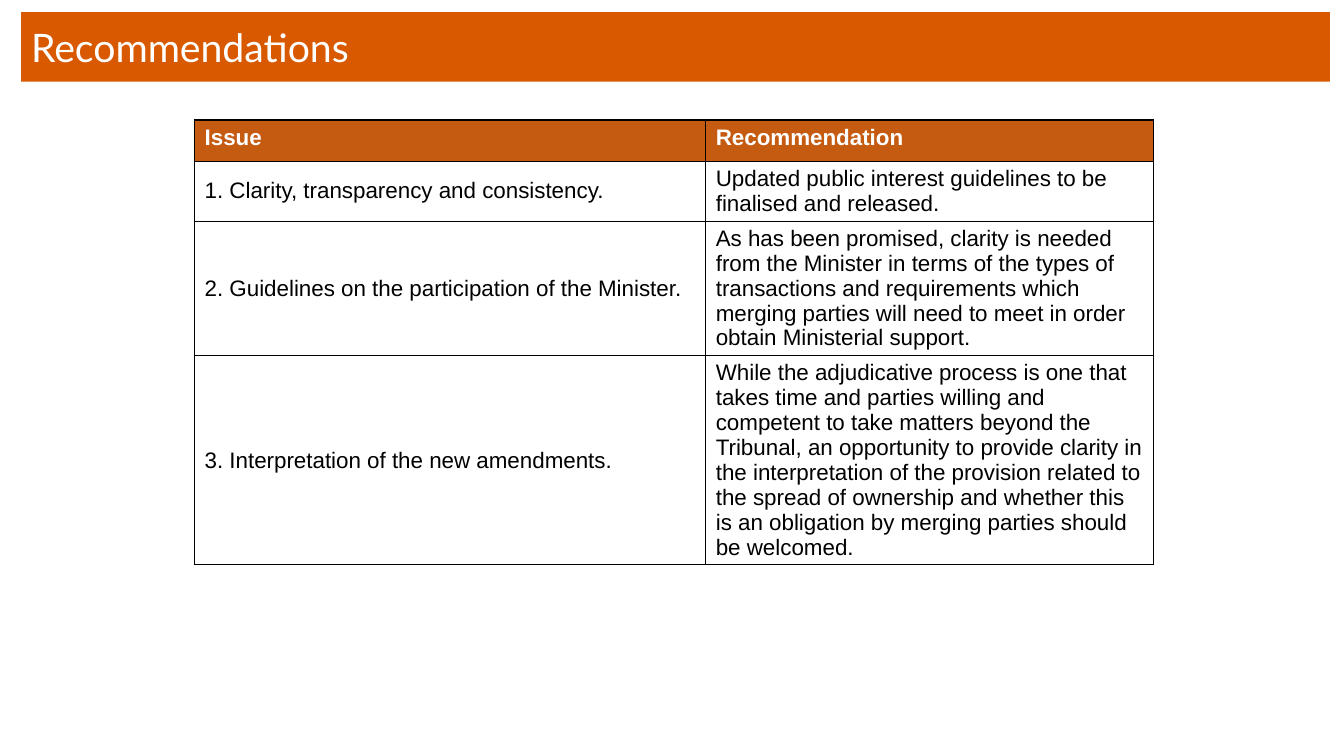
from lxml import etree
from pptx import Presentation, util as u
from pptx.dml import color
from pptx.enum import shapes, text
from pptx.oxml import ns

HUES = {"bar": "D95900", "head": "C55A11", "light": "FFFFFF", "dark": "000000"}
ROWS = [
    ("Issue", "Recommendation"),
    ("1. Clarity, transparency and consistency.",
     "Updated public interest guidelines to be finalised and released."),
    ("2. Guidelines on the participation of the Minister.",
     "As has been promised, clarity is needed from the Minister in terms of the "
     "types of transactions and requirements which merging parties will need to "
     "meet in order obtain Ministerial support."),
    ("3. Interpretation of the new amendments.",
     "While the adjudicative process is one that takes time and parties willing "
     "and competent to take matters beyond the Tribunal, an opportunity to provide "
     "clarity in the interpretation of the provision related to the spread of "
     "ownership and whether this is an obligation by merging parties should be "
     "welcomed."),
]


class Deck:
    """Hold the style and the current slide, and draw each kind of element."""

    def __init__(self):
        self.prs = Presentation()
        self.prs.slide_width = u.Inches(13.33)
        self.prs.slide_height = u.Inches(7.5)
        self.slide = self.prs.slides.add_slide(self.prs.slide_layouts[6])
        self.fonts = {
            "title": {"name": "Lato", "size": u.Pt(28), "bold": False},
            "head": {"name": "Arial", "size": u.Pt(16), "bold": True},
            "body": {"name": "Arial", "size": u.Pt(16), "bold": False},
        }

    def hue(self, name):
        return color.RGBColor.from_string(HUES[name])

    def paint(self, fill, name):
        fill.solid()
        fill.fore_color.rgb = self.hue(name)

    def label(self, frame, words, style, ink):
        para = frame.paragraphs[0]
        para.alignment = text.PP_ALIGN.LEFT
        run = para.add_run()
        run.text = words
        for key, value in self.fonts[style].items():
            setattr(run.font, key, value)
        run.font.color.rgb = self.hue(ink)

    def title(self, words, *box):
        bar = self.slide.shapes.add_shape(
            shapes.MSO_SHAPE.RECTANGLE, *map(u.Inches, box))
        bar.shadow.inherit = False
        self.paint(bar.fill, "bar")
        bar.line.fill.background()
        bar.text_frame.word_wrap = True
        bar.text_frame.vertical_anchor = text.MSO_ANCHOR.MIDDLE
        self.label(bar.text_frame, words, "title", "light")

    def border(self, cell):
        props = cell._tc.get_or_add_tcPr()
        for side in ("L", "R", "T", "B"):
            line = etree.SubElement(props, ns.qn(f"a:ln{side}"), w=str(u.Pt(1)))
            fill = etree.SubElement(line, ns.qn("a:solidFill"))
            etree.SubElement(fill, ns.qn("a:srgbClr"), val=HUES["dark"])

    def table(self, rows, left, top, widths, high):
        box = (left, top, sum(widths), high * len(rows))
        grid = self.slide.shapes.add_table(
            len(rows), len(widths), *map(u.Inches, box)).table
        for col, width in zip(grid.columns, widths):
            col.width = u.Inches(width)
        for r, row in enumerate(rows):
            grid.rows[r].height = u.Inches(high)
            for c, words in enumerate(row):
                cell = grid.cell(r, c)
                self.border(cell)
                if r == 0:
                    self.paint(cell.fill, "head")
                    self.label(cell.text_frame, words, "head", "light")
                else:
                    cell.fill.background()
                    cell.vertical_anchor = text.MSO_ANCHOR.MIDDLE
                    self.label(cell.text_frame, words, "body", "dark")


def main():
    deck = Deck()
    deck.title("Recommendations", 0.21, 0.12, 12.98, 0.69)
    deck.table(ROWS, 1.93, 1.19, (5.07, 4.44), 0.41)
    deck.prs.save("out.pptx")


if __name__ == "__main__":
    main()
